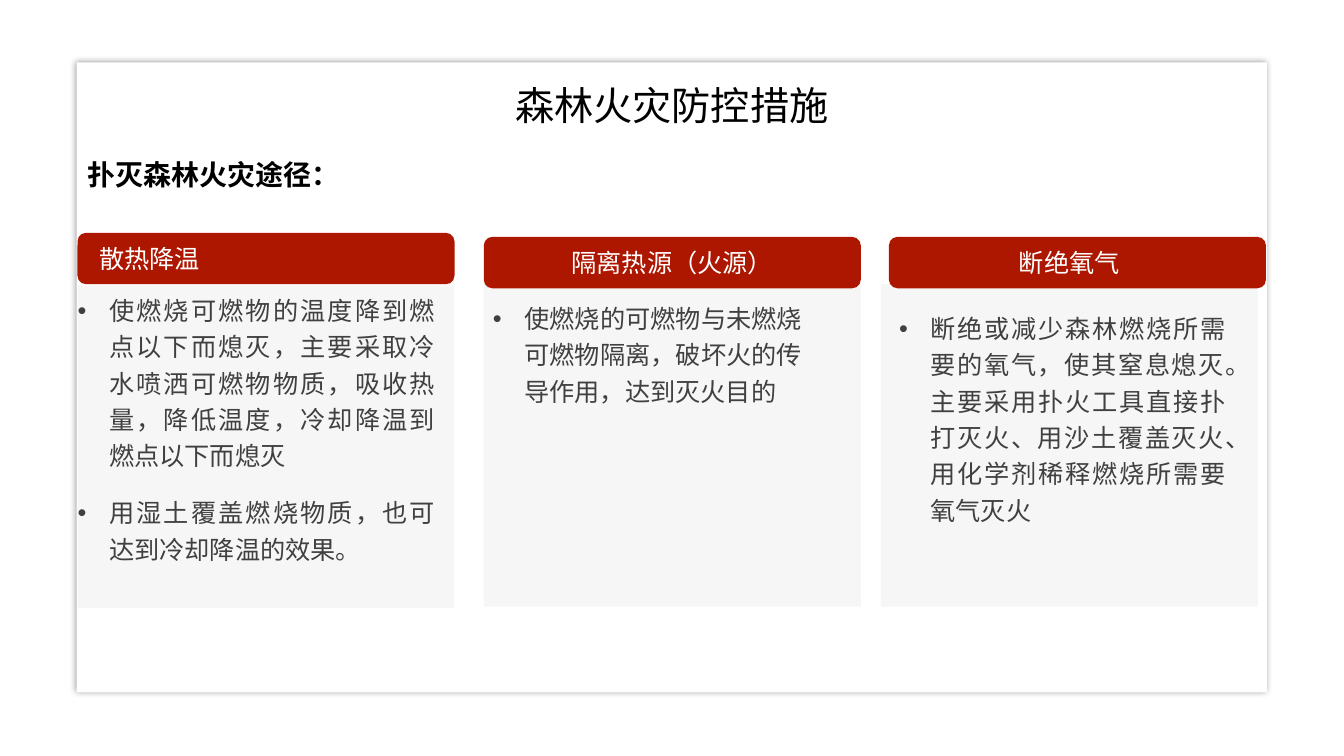
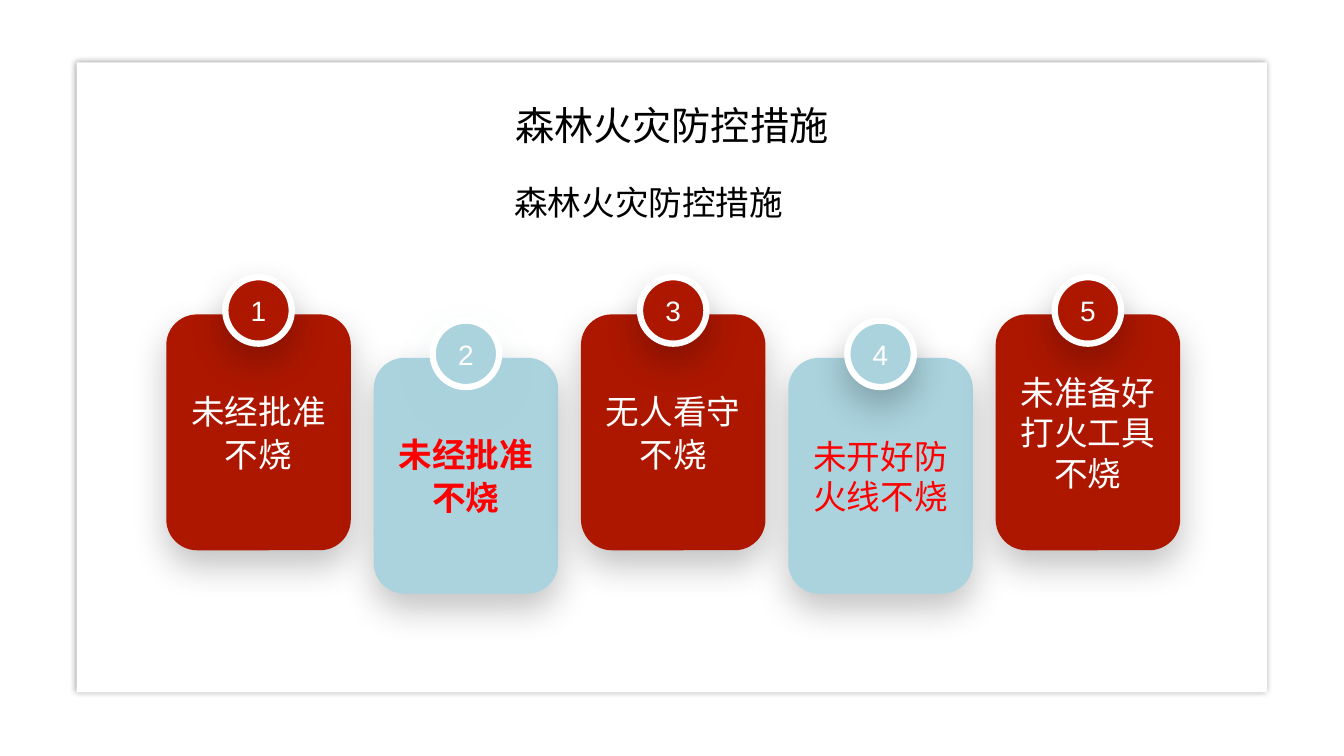
from itertools import cycle

from lxml.etree import SubElement
from pptx import Presentation
from pptx.dml.color import RGBColor
from pptx.enum.shapes import MSO_SHAPE
from pptx.enum.text import MSO_ANCHOR, MSO_AUTO_SIZE, PP_ALIGN
from pptx.oxml.ns import qn
from pptx.util import Pt

RED = RGBColor(0xAD, 0x17, 0x00)
BLUE = RGBColor(0xAA, 0xD3, 0xDE)
ALERT = RGBColor(0xFF, 0x00, 0x00)
PALE = RGBColor(0xF2, 0xF2, 0xF2)
GREY = RGBColor(0x40, 0x40, 0x40)
BLACK = RGBColor(0x00, 0x00, 0x00)
WHITE = RGBColor(0xFF, 0xFF, 0xFF)

FONT = "Arial"
TITLE = "森林火灾防控措施"
LEFT, MID, BOTH = PP_ALIGN.LEFT, PP_ALIGN.CENTER, PP_ALIGN.JUSTIFY
HANG = 22.5
FLAT = dict(margin_left=0, margin_right=0, margin_top=0, margin_bottom=0)

# list text, then left, top, width and height of its box
LISTS = {
    2: (["使燃烧可燃物的温度降到燃点以下而熄灭，主要采取冷水喷洒可燃物物质，"
         "吸收热量，降低温度，冷却降温到燃点以下而熄灭",
         "用湿土覆盖燃烧物质，也可达到冷却降温的效果。"],
        (55.4, 206.6, 255.6, 196)),
    3: (["使燃烧的可燃物与未燃烧可燃物隔离，破坏火的传导作用，达到灭火目的"],
        (352, 212.4, 221, 76)),
    4: (["断绝或减少森林燃烧所需要的氧气，使其窒息熄灭。主要采用扑火工具直接扑打灭火、"
         "用沙土覆盖灭火、用化学剂稀释燃烧所需要氧气灭火"],
        (642.2, 219.6, 233.3, 157)),
}
PANELS = [(55.4, 203.8), (345.6, 203), (629.3, 203)]
BARS = [
    ("散热降温", 55.4, 166.3, LEFT, dict(margin_left=Pt(13.7))),
    ("隔离热源（火源）", 345.6, 169.2, MID, {}),
    ("断绝氧气", 635, 169.2, MID, dict(margin_right=Pt(18.7))),
]
CARDS = [
    (["未经批准", "不烧"], {}),
    (["未经批准", "不烧"], dict(bold=True)),
    (["无人看守", "不烧"], {}),
    (["未开好防火线不烧"], {}),
    (["未准备好打火工具不烧"], {}),
]


def assign(item, values):
    for name, value in values.items():
        setattr(item, name, value)


def mark(para, bullet):
    """Give the paragraph a hanging bullet, or none."""
    props = para._p.get_or_add_pPr()
    indent = Pt(HANG) if bullet else 0
    props.set("marL", str(indent))
    props.set("indent", str(-indent))
    if bullet:
        SubElement(props, qn("a:buChar")).set("char", "•")
    else:
        SubElement(props, qn("a:buNone"))


def write(shape, lines, size, color, align=MID, anchor=MSO_ANCHOR.TOP,
          gap=0, after=0, spacing=1, bullet=False, bold=False, box=None):
    """Fill a shape with one paragraph per line; gap separates them."""
    frame = shape.text_frame
    assign(frame, dict(word_wrap=True, auto_size=MSO_AUTO_SIZE.NONE,
                       vertical_anchor=anchor, **(box or {})))
    for num, line in enumerate(lines):
        para = frame.add_paragraph() if num else frame.paragraphs[0]
        assign(para, dict(alignment=align, line_spacing=spacing,
                          space_before=Pt(gap if num else 0),
                          space_after=Pt(after)))
        mark(para, bullet)
        run = para.add_run()
        run.text = line
        assign(run.font, dict(name=FONT, size=Pt(size), bold=bold))
        run.font.color.rgb = color


def fill_slot(slide, index, area, lines, size, color, **style):
    """Move a placeholder to its area, in front, and write into it."""
    slot = slide.placeholders[index]
    names = ("left", "top", "width", "height")
    assign(slot, dict(zip(names, map(Pt, area))))
    write(slot, lines, size, color, **style)
    slide.shapes.element.append(slot.element)


def add_title(slide, top):
    fill_slot(slide, 0, (283.7, top, 392.4, 41), [TITLE], 28, BLACK)


def add_block(slide, kind, area, color, edge=None, alpha=None):
    block = slide.shapes.add_shape(kind, *map(Pt, area))
    block.shadow.inherit = False
    block.fill.solid()
    block.fill.fore_color.rgb = color
    if alpha:
        tone = block.element.spPr.find(f"{qn('a:solidFill')}/{qn('a:srgbClr')}")
        SubElement(tone, qn("a:alpha")).set("val", str(alpha * 1000))
    if edge:
        block.line.color.rgb = WHITE
        block.line.width = Pt(edge)
    else:
        block.line.fill.background()
    return block


def cast(block, color=BLACK, alpha=24, blur=26, dist=11, angle=90):
    """Add an outer shadow."""
    effects = block.element.spPr.find(qn("a:effectLst"))
    shade = SubElement(effects, qn("a:outerShdw"))
    for name, value in dict(blurRad=Pt(blur), dist=Pt(dist),
                            dir=angle * 60000, algn="ctr",
                            rotWithShape=0).items():
        shade.set(name, str(value))
    tone = SubElement(shade, qn("a:srgbClr"))
    tone.set("val", str(color))
    SubElement(tone, qn("a:alpha")).set("val", str(alpha * 1000))


def frame_master(deck, slide):
    """Build the framed page on a slide and move it to the master."""
    page = add_block(slide, MSO_SHAPE.RECTANGLE, (54.7, 44.6, 850.3, 450), WHITE)
    cast(page, alpha=40, blur=5, dist=0, angle=0)
    deck.slide_master.shapes.element.insert(2, page.element)


def add_ways(slide):
    for left, top in PANELS:
        add_block(slide, MSO_SHAPE.RECTANGLE, (left, top, 269.3, 230.4),
                  PALE, alpha=63)
    for text, left, top, align, box in BARS:
        bar = add_block(slide, MSO_SHAPE.ROUNDED_RECTANGLE,
                        (left, top, 269.3, 36.7), RED)
        write(bar, [text], 18, WHITE, align=align,
              anchor=MSO_ANCHOR.MIDDLE, box=box)
    fill_slot(slide, 1, (55.4, 108.7, 200, 32), ["扑灭森林火灾途径："],
              20, BLACK, align=LEFT, bold=True)
    for index, (lines, area) in LISTS.items():
        fill_slot(slide, index, area, lines, 18, GREY, align=BOTH, gap=15,
                  spacing=1.2, bullet=True, box=FLAT)
    add_title(slide, 54.7)


def add_cards(slide):
    wide, high, pitch, badge = 131.8, 168.5, 148.1, 47.5
    looks = cycle([(224.6, RED, WHITE), (255.6, BLUE, ALERT)])
    style = dict(anchor=MSO_ANCHOR.MIDDLE, gap=1, after=1)
    for num, ((lines, extra), (top, color, ink)) in enumerate(zip(CARDS, looks)):
        left = 118.8 + num * pitch
        card = add_block(slide, MSO_SHAPE.ROUNDED_RECTANGLE,
                         (left, top, wide, high), color)
        cast(card)
        write(card, lines, 24, ink, **style, **extra)
        disc = add_block(slide, MSO_SHAPE.OVAL,
                         (left + (wide - badge) / 2, top - 26.6, badge, badge),
                         color, edge=4.5)
        cast(disc, BLUE if num == 1 else BLACK)
        write(disc, [str(num + 1)], 20, WHITE, **style)
    fill_slot(slide, 1, (333.4, 126, 260, 36), [TITLE], 24, BLACK)
    add_title(slide, 68.4)


def main():
    deck = Presentation()
    assign(deck, dict(slide_width=Pt(960), slide_height=Pt(540)))
    ways = deck.slides.add_slide(deck.slide_layouts.get_by_name("Comparison"))
    frame_master(deck, ways)
    add_ways(ways)
    plan = deck.slide_layouts.get_by_name("Title and Content")
    add_cards(deck.slides.add_slide(plan))
    deck.save("out.pptx")


if __name__ == "__main__":
    main()
